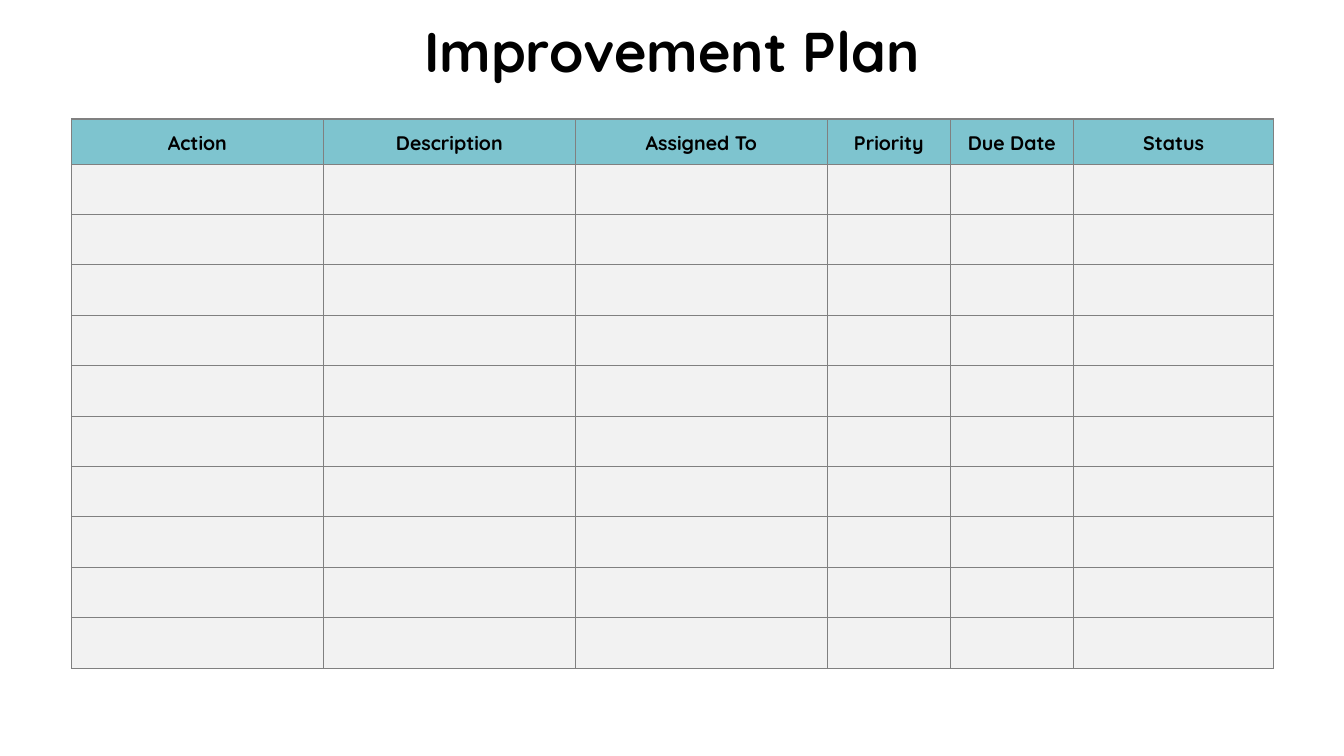
from pptx import Presentation
from pptx import util as u
from pptx.dml.color import RGBColor
from pptx.enum import text
from pptx.oxml import parse_xml
from pptx.oxml.ns import nsdecls

FONT = "Quicksand"
BLACK = RGBColor(0x00, 0x00, 0x00)
TEAL = RGBColor(0x7E, 0xC4, 0xCF)
PALE_GREY = RGBColor(0xF2, 0xF2, 0xF2)
BORDER_GREY = RGBColor(0x80, 0x80, 0x80)

HEADINGS = {
    "Action": 6.35,
    "Description": 6.35,
    "Assigned To": 6.35,
    "Priority": 3.1,
    "Due Date": 3.1,
    "Status": 5.05,
}
ACTION_ROWS = 10
HEADER_HEIGHT = 1.0
ROW_HEIGHT = 1.27


def write_line(paragraph, wording, size, spacing):
    paragraph.alignment = text.PP_ALIGN.CENTER
    paragraph.line_spacing = spacing
    run = paragraph.add_run()
    run.text = wording
    run.font.name = FONT
    run.font.size = u.Pt(size)
    run.font.bold = True
    run.font.color.rgb = BLACK


def style_cell(cell, colour):
    properties = cell._tc.get_or_add_tcPr()
    for side in ("lnL", "lnR", "lnT", "lnB"):
        properties.append(parse_xml(
            f'<a:{side} {nsdecls("a")} w="{u.Pt(1)}"><a:solidFill>'
            f'<a:srgbClr val="{BORDER_GREY}"/></a:solidFill></a:{side}>'))
    cell.fill.solid()
    cell.fill.fore_color.rgb = colour


def add_title(slide, left, top, width, height):
    title = slide.shapes.add_textbox(u.Cm(left), u.Cm(top), u.Cm(width), u.Cm(height))
    frame = title.text_frame
    frame.word_wrap = True
    frame.vertical_anchor = text.MSO_ANCHOR.MIDDLE
    write_line(frame.paragraphs[0], "Improvement Plan", 40, 0.9)


def add_plan(slide, left, top):
    width = sum(HEADINGS.values())
    height = HEADER_HEIGHT + ACTION_ROWS * ROW_HEIGHT
    plan = slide.shapes.add_table(
        ACTION_ROWS + 1, len(HEADINGS),
        u.Cm(left), u.Cm(top), u.Cm(width), u.Cm(height)).table
    plan.first_row = False
    plan.horz_banding = False

    for row_index, row in enumerate(plan.rows):
        is_header = row_index == 0
        row.height = u.Cm(HEADER_HEIGHT if is_header else ROW_HEIGHT)
        for cell in row.cells:
            style_cell(cell, TEAL if is_header else PALE_GREY)

    for index, (heading, column_width) in enumerate(HEADINGS.items()):
        plan.columns[index].width = u.Cm(column_width)
        cell = plan.cell(0, index)
        cell.margin_left = cell.margin_right = u.Cm(0.25)
        cell.margin_top = cell.margin_bottom = u.Cm(0.25)
        cell.vertical_anchor = text.MSO_ANCHOR.MIDDLE
        write_line(cell.text_frame.paragraphs[0], heading, 14, 1.07)


def main():
    deck = Presentation()
    deck.slide_width = u.Cm(33.87)
    deck.slide_height = u.Cm(19.05)
    slide = deck.slides.add_slide(deck.slide_layouts[6])
    add_title(slide, 10, 0, 13.87, 2.74)
    add_plan(slide, 1.8, 3)
    deck.save("out.pptx")


if __name__ == "__main__":
    main()
